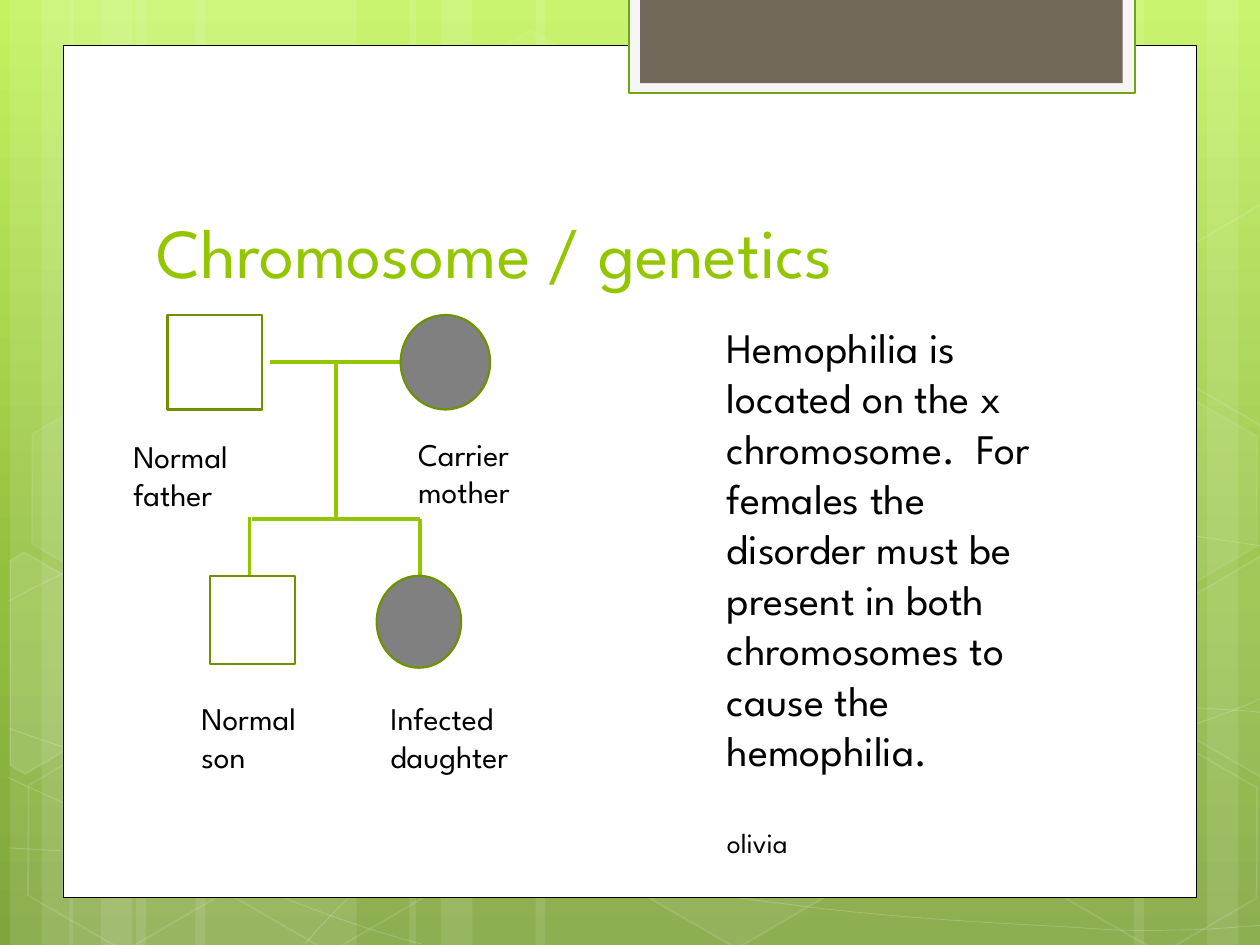
from math import cos, radians, sin

from lxml.etree import SubElement
from pptx import Presentation
from pptx.dml.color import RGBColor
from pptx.enum.shapes import MSO_CONNECTOR, MSO_SHAPE
from pptx.enum.text import MSO_ANCHOR, MSO_AUTO_SIZE, PP_ALIGN
from pptx.oxml.ns import qn
from pptx.util import Inches, Pt

COLUMNS, ROWS = 10, 7.5
FONT = "League Spartan"
TILT = 30
COLORS = {
    "white": "FFFFFF", "ink": "000000", "lime": "94C600", "leaf": "6D9200",
    "tab_edge": "74A510", "tab_rim": "F5F5F5", "tab": "71685A", "affected": "808080",
    "sky": "C3F35F", "meadow": "93BF3F", "moss": "81A53E",
}
BACKDROP = [("sky", 0), ("meadow", 62), ("moss", 100)]

# Each wave is a list of cubic runs, joined by straight lines
WAVES = [
    [[(.07, 6.73), (.61, 6.76), (1.15, 6.79), (1.9, 6.78), (2.65, 6.77), (3.58, 6.75),
      (4.58, 6.65), (5.58, 6.55), (7, 6.36), (7.92, 6.17), (8.83, 5.98), (9.77, 5.68),
      (10.07, 5.51)]],
    [[(.07, 4.77), (.36, 4.61), (.65, 4.46), (1.21, 4.31), (1.78, 4.16), (2.59, 3.94),
      (3.47, 3.87), (4.36, 3.8), (5.44, 3.79), (6.54, 3.87), (7.64, 3.95), (9.47, 4.26),
      (10.07, 4.34)]],
    [[(.06, 6.17), (1.27, 6.72), (2.47, 7.27), (3.34, 7.49)]],
    [[(.07, 5.78), (.38, 5.89), (.7, 6), (1.28, 6.16), (1.86, 6.31), (2.73, 6.56),
      (3.57, 6.73), (4.4, 6.9), (5.45, 7.08), (6.28, 7.18), (7.11, 7.29), (8, 7.33),
      (8.53, 7.36), (9.05, 7.4), (9.19, 7.38), (9.45, 7.38), (9.71, 7.37), (9.89, 7.35),
      (10.07, 7.34)]],
    [[(2.42, 7.49), (2.6, 7.29), (2.78, 7.09), (3.02, 6.91), (3.26, 6.73), (3.6, 6.53),
      (3.88, 6.39), (4.16, 6.25), (4.33, 6.19), (4.7, 6.09), (5.06, 5.99), (5.73, 5.85),
      (6.08, 5.78), (6.44, 5.71), (6.49, 5.71), (6.8, 5.69), (7.11, 5.66), (7.6, 5.63),
      (7.94, 5.62), (8.29, 5.61), (8.86, 5.62), (8.86, 5.62)],
     [(9.53, 5.62), (9.71, 5.63), (9.88, 5.64), (9.97, 5.65), (10.06, 5.66),
      (10.03, 5.65), (10.06, 5.66)]],
]
# Left, top, fill opacity (None for outline only), line opacity
HEXAGONS = [
    (3.34, .36, 4, 8), (4.97, 5.89, 6, 12), (.11, 5.91, None, 12), (.14, 3.12, 7, 8),
    (1.74, 5.92, None, 12), (7.53, 4.53, 10, 12), (8.34, 5.93, None, 12), (8.34, 3.14, 7, 8),
]
LEFT_CUT = [(.08, 4.45), (.19, 4.38), (.96, 4.82), (.95, 5.7), (.2, 6.14), (.08, 6.07)]
RIGHT_CUT = [(9.26, 4.85), (10.01, 4.41), (10.09, 4.46), (10.09, 6.13), (10.02, 6.17),
             (9.26, 5.73)]
RIGHT_CUT_RISE = 2.79

PEDIGREE = [
    (MSO_SHAPE.RECTANGLE, (1.33, 2.5, .75, .75), None),
    (MSO_SHAPE.FLOWCHART_CONNECTOR, (3.18, 2.5, .71, .75), "affected"),
    (MSO_SHAPE.FLOWCHART_CONNECTOR, (2.99, 4.57, .67, .73), "affected"),
    (MSO_SHAPE.RECTANGLE, (1.67, 4.57, .67, .7), None),
]
COUPLE_Y, BRANCH_Y, MIDDLE_X, SON_X, DAUGHTER_X = 2.87, 4.12, 2.67, 1.98, 3.33
DESCENT = [
    ((2.14, COUPLE_Y), (3.31, COUPLE_Y)),
    ((MIDDLE_X, COUPLE_Y), (MIDDLE_X, BRANCH_Y)),
    ((MIDDLE_X, BRANCH_Y), (2, BRANCH_Y)),
    ((DAUGHTER_X, BRANCH_Y), (MIDDLE_X, BRANCH_Y)),
    ((DAUGHTER_X, 4.61), (DAUGHTER_X, BRANCH_Y)),
    ((SON_X, 4.58), (SON_X, 4.1)),
]
LABELS = [
    ("Normal father", (.96, 3.42, 1.5, .71)),
    ("Carrier mother", (3.22, 3.4, 1.33, .71)),
    ("Normal son", (1.5, 5.5, 1.17, .71)),
    ("Infected daughter", (3, 5.5, 1.42, .71)),
]
EXPLANATION = ("Hemophilia is located on the x chromosome.  For females the disorder must be "
               "present in both chromosomes to cause the hemophilia.")


def rgb(name):
    return RGBColor.from_string(COLORS[name])


def write(paragraph, text, size=18, color="ink", before=0):
    paragraph.alignment = PP_ALIGN.LEFT
    paragraph.space_before = Pt(before)
    run = paragraph.add_run()
    run.text = text
    run.font.name, run.font.size = FONT, Pt(size)
    run.font.color.rgb = rgb(color)


def turn_back(points, center):
    """Undo the tilt of the points around the center."""
    cx, cy = center
    c, s = cos(radians(TILT)), sin(radians(TILT))
    return [(cx + (x - cx) * c + (y - cy) * s, cy - (x - cx) * s + (y - cy) * c)
            for x, y in points]


class Sheet:
    """The current slide and its grid of columns and rows."""

    def __init__(self, deck):
        self.slide = deck.slides.add_slide(deck.slide_layouts[5])
        self.shapes = self.slide.shapes
        self.column = deck.slide_width / COLUMNS
        self.row = deck.slide_height / ROWS

    def place(self, *lengths):
        """Turn alternating columns and rows into slide units."""
        return [round(n * (self.row if i % 2 else self.column))
                for i, n in enumerate(lengths)]

    def backdrop(self, stops):
        fill = self.slide.background.fill
        fill.gradient()
        fill.gradient_angle = 270
        stop_list = self.slide.element.find(".//" + qn("a:gsLst"))
        stop_list.clear()
        for name, share in stops:
            stop = SubElement(stop_list, qn("a:gs"), pos=str(share * 1000))
            SubElement(stop, qn("a:srgbClr"), val=COLORS[name])

    def paint(self, shape, fill=None, line=None, width=1, fill_alpha=None, line_alpha=None):
        shape.shadow.inherit = False
        shape.line.width = Pt(width)
        for part, name, alpha, tag in ((shape.fill, fill, fill_alpha, "a:solidFill"),
                                       (shape.line.fill, line, line_alpha, "a:ln/a:solidFill")):
            if name is None:
                part.background()
                continue
            part.solid()
            part.fore_color.rgb = rgb(name)
            if alpha is not None:
                steps = [qn(step) for step in ("p:spPr/" + tag + "/a:srgbClr").split("/")]
                color = shape.element.find("/".join(steps))
                SubElement(color, qn("a:alpha"), val=str(alpha * 1000))

    def shape(self, kind, box, **look):
        shape = self.shapes.add_shape(kind, *self.place(*box))
        self.paint(shape, **look)
        return shape

    def outline(self, points, close=False, **look):
        start, *rest = [self.place(*point) for point in points]
        builder = self.shapes.build_freeform(*start)
        builder.add_line_segments(rest, close=close)
        outline = builder.convert_to_shape()
        self.paint(outline, **look)
        return outline

    def curve(self, runs, **look):
        """Draw cubic runs by merging each three points into one segment."""
        outline = self.outline([point for run in runs for point in run], **look)
        route = outline.element.find(".//" + qn("a:path"))
        segments = iter(route.findall(qn("a:lnTo")))
        for number, run in enumerate(runs):
            if number:
                next(segments)
            for _ in range(len(run) // 3):
                cubic, *others = [next(segments) for _ in range(3)]
                cubic.tag = qn("a:cubicBezTo")
                for other in others:
                    cubic.extend(list(other))
                    route.remove(other)

    def connector(self, start, end):
        line = self.shapes.add_connector(MSO_CONNECTOR.STRAIGHT, *self.place(*start, *end))
        line.line.color.rgb = rgb("lime")
        line.line.width = Pt(2.25)
        SubElement(line.element.spPr, qn("a:effectLst"))

    def title(self, text, box):
        title = self.shapes.title
        title.left, title.top, title.width, title.height = self.place(*box)
        title.text_frame.vertical_anchor = MSO_ANCHOR.BOTTOM
        title.text_frame.auto_size = MSO_AUTO_SIZE.NONE
        write(title.text_frame.paragraphs[0], text, size=40, color="lime")
        title.element.getparent().append(title.element)

    def text(self, text, box, **look):
        frame = self.shapes.add_textbox(*self.place(*box)).text_frame
        frame.word_wrap = True
        frame.auto_size = MSO_AUTO_SIZE.SHAPE_TO_FIT_TEXT
        write(frame.paragraphs[0], text, **look)
        return frame


def draw_backdrop(sheet):
    sheet.backdrop(BACKDROP)
    stripes = [(7.33, 1.75), (9.58, .5), (9, .83)]
    for left, wide in ((.08, 1.75), (.55, 1.75), (3.25, 3.08)):
        stripes += [(left + 1, wide), (left, .5), (left + .25, .83)]
    for left, width in stripes:
        sheet.shape(MSO_SHAPE.RECTANGLE, (left, 0, width, ROWS), fill="white", fill_alpha=10)
    for wave in WAVES:
        sheet.curve(wave, line="white", width=.5, line_alpha=20)
    for left, top, fill_alpha, line_alpha in HEXAGONS:
        hexagon = sheet.shape(MSO_SHAPE.HEXAGON, (left, top, 1.75, 1.52),
                              fill="white" if fill_alpha else None, line="white",
                              fill_alpha=fill_alpha, line_alpha=line_alpha)
        hexagon.adjustments[0] = .285
        hexagon.rotation = TILT
    upper_cut = [(x, y - RIGHT_CUT_RISE) for x, y in RIGHT_CUT]
    for points, center, fill, alpha in ((LEFT_CUT, (.36, 5.35), "white", 10),
                                        (RIGHT_CUT, (9.85, 5.2), "white", 4),
                                        (upper_cut, (9.85, 2.41), None, None)):
        cut = sheet.outline(turn_back(points, center), close=True, fill=fill, line="white",
                            fill_alpha=alpha, line_alpha=12)
        cut.rotation = TILT
    for box, look in (((.5, .36, 9, 6.76), dict(fill="white", line="ink", width=.5)),
                      ((4.99, -.02, 4.02, .76),
                       dict(fill="tab_rim", line="tab_edge", width=1.25)),
                      ((5.08, -.02, 3.83, .68), dict(fill="tab"))):
        sheet.shape(MSO_SHAPE.RECTANGLE, box, **look)


def main():
    deck = Presentation()
    deck.slide_width, deck.slide_height = Inches(10), Inches(7.5)
    sheet = Sheet(deck)
    draw_backdrop(sheet)
    sheet.title("Chromosome / genetics", (1.14, 1.12, 7.68, 1.25))
    for start, end in DESCENT:
        sheet.connector(start, end)
    for kind, box, fill in PEDIGREE:
        sheet.shape(kind, box, fill=fill, line="leaf", width=1.25)
    for label, box in LABELS:
        sheet.text(label, box)
    explanation = sheet.text(EXPLANATION, (5.67, 2.5, 2.75, 4.81), size=24)
    write(explanation.add_paragraph(), "olivia", size=16, before=29)
    deck.save("out.pptx")


if __name__ == "__main__":
    main()
